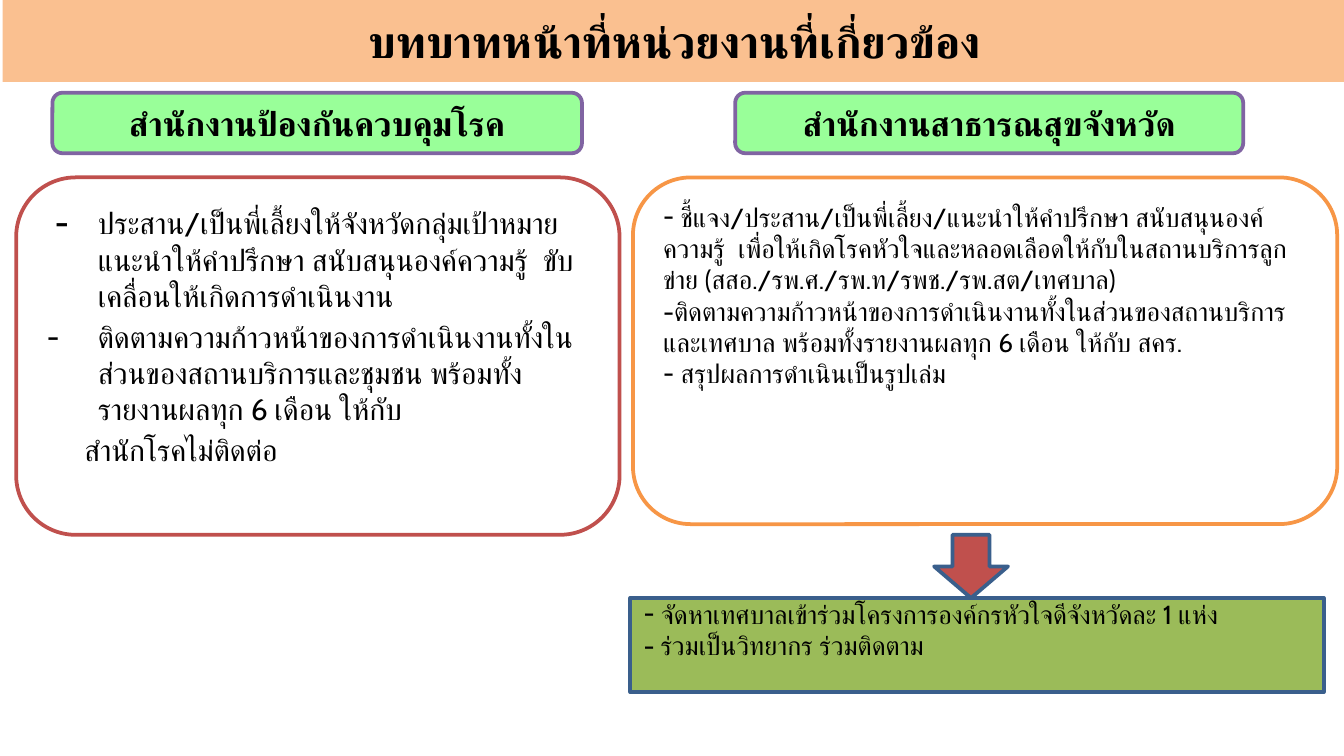
from lxml.etree import SubElement
from pptx import Presentation
from pptx.dml.color import RGBColor
from pptx.enum.shapes import MSO_SHAPE
from pptx.enum.text import MSO_ANCHOR, PP_ALIGN
from pptx.oxml.ns import qn
from pptx.util import Inches, Pt

BLACK = RGBColor(0x00, 0x00, 0x00)
WHITE = RGBColor(0xFF, 0xFF, 0xFF)
PEACH = RGBColor(0xFA, 0xC0, 0x90)
MINT = RGBColor(0x99, 0xFF, 0x99)
GREEN = RGBColor(0x9B, 0xBB, 0x59)
RED = RGBColor(0xC0, 0x50, 0x4D)
ORANGE = RGBColor(0xF7, 0x96, 0x46)
PURPLE = RGBColor(0x80, 0x64, 0xA2)
BLUE = RGBColor(0x3A, 0x5F, 0x8C)


class Board:
    """Style and current slide; lengths are grid cells of a tenth of an inch."""
    font = "Cabin"
    cell = 0.1

    def __init__(self, deck):
        self.slide = deck.slides.add_slide(deck.slide_layouts[6])

    def unit(self, count):
        return Inches(count * self.cell)

    def shape(self, kind, place, fill, line=None):
        item = self.slide.shapes.add_shape(kind, *map(self.unit, place))
        item.shadow.inherit = False
        item.fill.solid()
        item.fill.fore_color.rgb = fill
        if line is None:
            item.line.fill.background()
        else:
            item.line.color.rgb = line
            item.line.width = Pt(2)
        return item

    def frame(self, item, anchor):
        frame = item.text_frame
        frame.word_wrap = True
        frame.vertical_anchor = anchor
        return frame

    def style(self, para, size, bold=False):
        font = para.font
        font.name, font.size, font.bold = self.font, Pt(size), bold
        font.color.rgb = BLACK

    def label(self, kind, place, fill, line, text, size):
        item = self.shape(kind, place, fill, line)
        para = self.frame(item, MSO_ANCHOR.MIDDLE).paragraphs[0]
        para.text = text
        para.alignment = PP_ALIGN.CENTER
        self.style(para, size, True)

    def body(self, kind, place, fill, line, rows, size, gap=0):
        """Each row is (text, dash bullet?, left margin, first-line indent)."""
        item = self.shape(kind, place, fill, line)
        frame = self.frame(item, MSO_ANCHOR.TOP)
        for num, (text, dash, left, first) in enumerate(rows):
            para = frame.add_paragraph() if num else frame.paragraphs[0]
            para.text = text
            para.alignment = PP_ALIGN.LEFT
            para.space_before = Pt(gap if num else 0)
            props = para._p.get_or_add_pPr()
            props.set("marL", str(self.unit(left)))
            props.set("indent", str(self.unit(first)))
            if dash:
                SubElement(props, qn("a:buFont")).set("typeface", self.font)
                SubElement(props, qn("a:buChar")).set("char", "-")
            else:
                SubElement(props, qn("a:buNone"))
            self.style(para, size)
        return frame


def main():
    deck = Presentation()
    deck.slide_width = Inches(10)
    deck.slide_height = deck.slide_width * 9 // 16
    board = Board(deck)
    box, round_box = MSO_SHAPE.RECTANGLE, MSO_SHAPE.ROUNDED_RECTANGLE

    # Title band
    board.label(box, (0.2, 0, 100, 6.1), PEACH, None,
                "บทบาทหน้าที่หน่วยงานที่เกี่ยวข้อง", 24)

    # Duties of the disease control office
    duties = board.body(round_box, (1.2, 13.2, 44.9, 26.6), WHITE, RED, [
        ("\tประสาน/เป็นพี่เลี้ยงให้จังหวัดกลุ่มเป้าหมาย แนะนำให้คำปรึกษา "
         "สนับสนุนองค์ความรู้  ขับเคลื่อนให้เกิดการดำเนินงาน", False, 3.8, -3.2),
        ("ติดตามความก้าวหน้าของการดำเนินงานทั้งในส่วนของสถานบริการและชุมชน "
         "พร้อมทั้งรายงานผลทุก 6 เดือน ให้กับ", True, 3.8, -3.8),
        ("สำนักโรคไม่ติดต่อ", False, 2.8, 0),
    ], 16, 3)
    # The first dash is heavier than its text
    para = duties.paragraphs[0]
    mark = para.add_run()
    mark.text = "-"
    mark.font.size, mark.font.bold = Pt(18), True
    para.runs[0]._r.addprevious(mark._r)

    # Duties of the provincial health office
    board.body(round_box, (47.1, 13.2, 52.4, 25.8), WHITE, ORANGE, [
        (" ชี้แจง/ประสาน/เป็นพี่เลี้ยง/แนะนำให้คำปรึกษา สนับสนุนองค์ความรู้  "
         "เพื่อให้เกิดโรคหัวใจและหลอดเลือดให้กับในสถานบริการลูกข่าย "
         "(สสอ./รพ.ศ./รพ.ท/รพช./รพ.สต/เทศบาล)", True, 0, 0),
        ("-ติดตามความก้าวหน้าของการดำเนินงานทั้งในส่วนของสถานบริการและเทศบาล "
         "พร้อมทั้งรายงานผลทุก 6 เดือน ให้กับ สคร.", False, 0, 0),
        (" สรุปผลการดำเนินเป็นรูปเล่ม", True, 0, 0),
    ], 14)

    # Office names
    for left, width, name in ((3.9, 39.4, "สำนักงานป้องกันควบคุมโรค"),
                              (54.7, 37.8, "สำนักงานสาธารณสุขจังหวัด")):
        board.label(round_box, (left, 6.9, width, 4.5), MINT, PURPLE, name, 18)

    # Follow-up tasks and the arrow down to them
    tasks = board.body(box, (46.9, 44.5, 51.6, 7), GREEN, BLUE, [
        (" จัดหาเทศบาลเข้าร่วมโครงการองค์กรหัวใจดีจังหวัดละ 1 แห่ง", True, 0, 0),
        ("- ร่วมเป็นวิทยากร ร่วมติดตาม", False, 0, 0),
    ], 14)
    tasks.margin_top = 0
    board.shape(MSO_SHAPE.DOWN_ARROW, (69.5, 39.8, 5.5, 4.7), RED, BLUE)

    deck.save("out.pptx")


if __name__ == "__main__":
    main()
